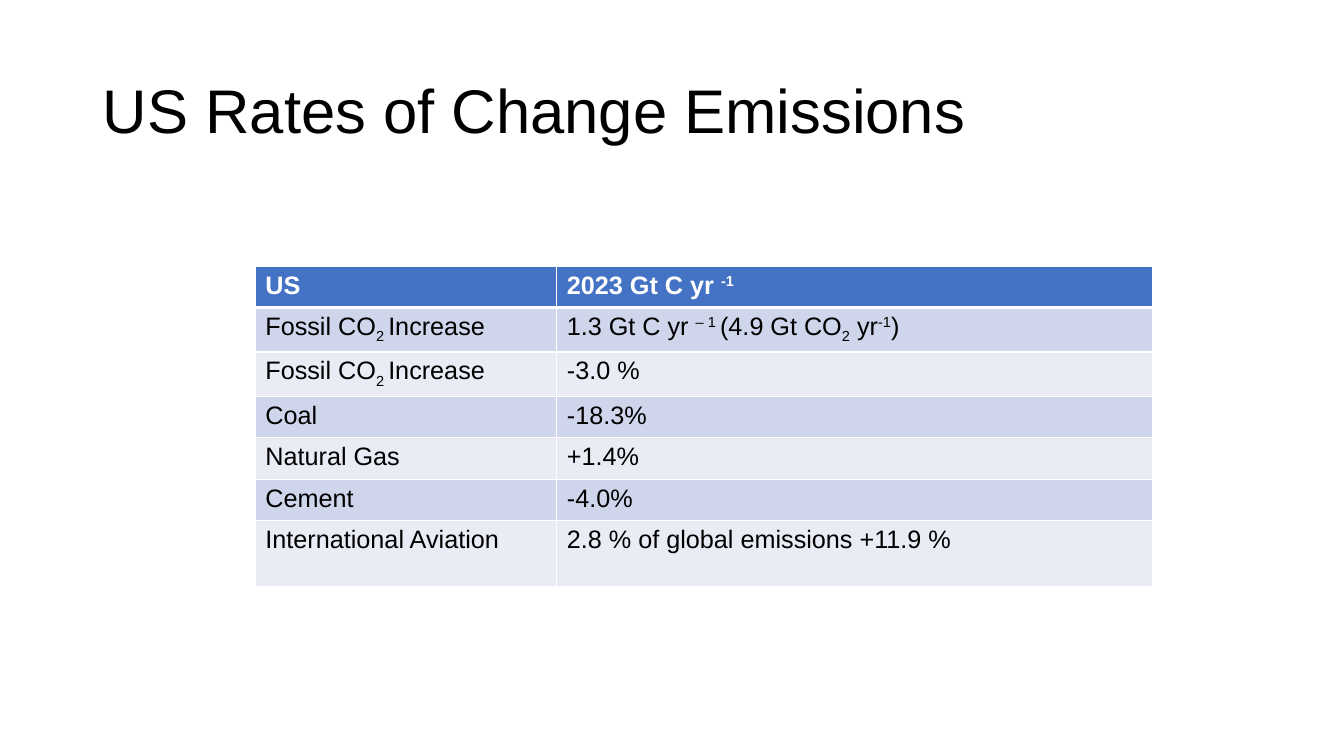
from dataclasses import dataclass

from lxml import etree
from pptx import Presentation
from pptx import util as u
from pptx.dml import color
from pptx.enum import text
from pptx.oxml import ns


@dataclass(frozen=True)
class Theme:
    font: str = "Arial"
    ink: str = "000000"
    white: str = "FFFFFF"
    header: str = "4472C4"
    bands: tuple = ("CFD5EA", "E9EBF5")
    title_size: int = 44
    table_size: int = 18
    thin_line: int = 1
    header_line: int = 3


# "|" separates the runs; "_" opens a subscript and "^" a superscript
BASELINES = {"_": "-25000", "^": "30000"}
EMISSIONS = [
    ("US", "2023 Gt C yr |^-1"),
    ("Fossil CO|_2 |Increase", "1.3 Gt C yr |^– 1 |(4.9 Gt CO|_2| yr|^-1|)"),
    ("Fossil CO|_2 |Increase", "-3.0 %"),
    ("Coal", "-18.3%"),
    ("Natural Gas", "+1.4%"),
    ("Cement", "-4.0%"),
    ("International Aviation", "2.8 % of global emissions +11.9 %"),
]


class SlideBuilder:
    """Places elements on a grid of 100 columns by 100 rows."""

    def __init__(self, deck, theme):
        self.theme = theme
        self.column = deck.slide_width / 100
        self.row = deck.slide_height / 100
        self.slide = deck.slides.add_slide(deck.slide_layouts[6])

    def across(self, columns):
        return u.Emu(round(columns * self.column))

    def down(self, rows):
        return u.Emu(round(rows * self.row))

    def area(self, left, top, width, height):
        return self.across(left), self.down(top), self.across(width), self.down(height)

    def add_wording(self, para, wording, size, ink, bold=False):
        for piece in wording.split("|"):
            span = para.add_run()
            baseline = BASELINES.get(piece[0])
            span.text = piece[1:] if baseline else piece
            span.font.name = self.theme.font
            span.font.size = u.Pt(size)
            span.font.bold = bold
            span.font.color.rgb = color.RGBColor.from_string(ink)
            if baseline:
                span.font._element.set("baseline", baseline)

    def title(self, wording, *place):
        box = self.slide.shapes.add_textbox(*self.area(*place))
        frame = box.text_frame
        frame.word_wrap = True
        frame.vertical_anchor = text.MSO_ANCHOR.MIDDLE
        para = frame.paragraphs[0]
        para.line_spacing = 0.9
        self.add_wording(para, wording, self.theme.title_size, self.theme.ink)

    def borders(self, cell, top, bottom):
        properties = cell._tc.get_or_add_tcPr()
        thin = self.theme.thin_line
        sides = {"lnL": thin, "lnR": thin, "lnT": top, "lnB": bottom}
        for index, (side, points) in enumerate(sides.items()):
            line = etree.Element(ns.qn(f"a:{side}"), w=str(u.Pt(points)))
            fill = etree.SubElement(line, ns.qn("a:solidFill"))
            etree.SubElement(fill, ns.qn("a:srgbClr"), val=self.theme.white)
            properties.insert(index, line)

    def table(self, records, left, top, widths, heights):
        theme = self.theme
        place = self.area(left, top, sum(widths), sum(heights))
        grid = self.slide.shapes.add_table(len(records), len(widths), *place).table
        for column, width in zip(grid.columns, widths):
            column.width = self.across(width)
        for number, (row, height, record) in enumerate(zip(grid.rows, heights, records)):
            row.height = self.down(height)
            header = number == 0
            fill = theme.header if header else theme.bands[(number - 1) % 2]
            ink = theme.white if header else theme.ink
            above = theme.header_line if number == 1 else theme.thin_line
            below = theme.header_line if header else theme.thin_line
            for cell, wording in zip(row.cells, record):
                cell.fill.solid()
                cell.fill.fore_color.rgb = color.RGBColor.from_string(fill)
                self.borders(cell, above, below)
                para = cell.text_frame.paragraphs[0]
                self.add_wording(para, wording, theme.table_size, ink, header)


def main():
    deck = Presentation()
    deck.slide_width, deck.slide_height = u.Inches(13.33), u.Inches(7.5)
    page = SlideBuilder(deck, Theme())

    # Heading
    page.title("US Rates of Change Emissions", 6.9, 5.33, 86.25, 19.33)

    # Emissions table, with a taller last row
    heights = [5.47] * (len(EMISSIONS) - 1) + [8.7]
    page.table(EMISSIONS, 19, 35.2, (22.43, 44.33), heights)

    deck.save("out.pptx")


if __name__ == "__main__":
    main()
